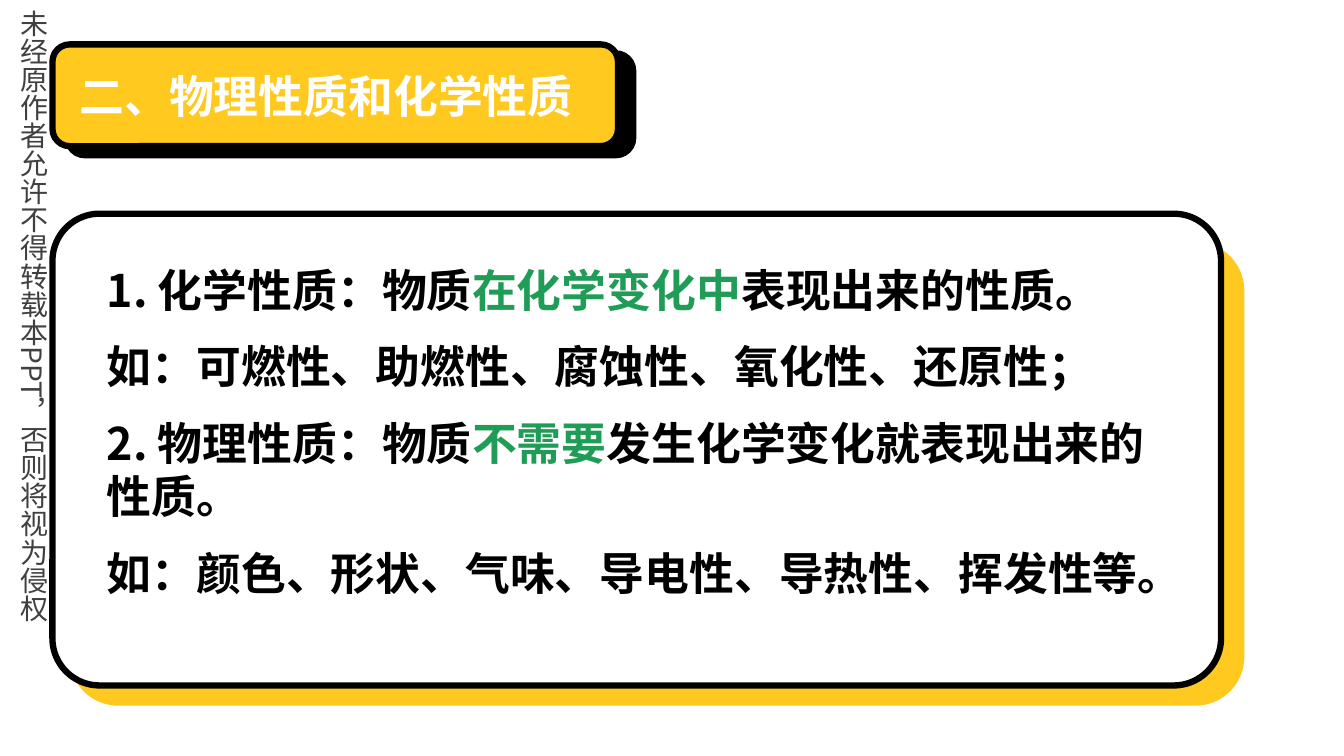
from pptx import Presentation
from pptx.dml.color import RGBColor
from pptx.enum import shapes, text
from pptx.oxml import ns
from pptx.util import Inches, Pt
from lxml import etree

FONT = "Noto Sans CJK SC"
BLACK = RGBColor(0, 0, 0)
WHITE = RGBColor(255, 255, 255)
YELLOW = RGBColor(0xFF, 0xC9, 0x1F)
GREEN = RGBColor(0x1F, 0x9C, 0x56)
GREY = RGBColor(0x40, 0x40, 0x40)

NOTICE = "未经原作者允许不得转载本PPT，否则将视为侵权"
TITLE = "二、物理性质和化学性质"
PROPERTIES = [
    [("1. 化学性质：物质", BLACK), ("在化学变化中", GREEN), ("表现出来的性质。", BLACK)],
    [("如：可燃性、助燃性、腐蚀性、氧化性、还原性；", BLACK)],
    [("2. 物理性质：物质", BLACK), ("不需要", GREEN), ("发生化学变化就表现出来的性质。", BLACK)],
    [("如：颜色、形状、气味、导电性、导热性、挥发性等。", BLACK)],
]


def add_run(p, content, size=32, color=BLACK, bold=True):
    r = p.add_run()
    r.text = content
    r.font.size = Pt(size)
    r.font.bold = bold
    r.font.color.rgb = color
    r.font.name = FONT
    ea = etree.SubElement(r._r.get_or_add_rPr(), ns.qn("a:ea"))
    ea.set("typeface", FONT)


def add_text(slide, box, paragraphs, size=32, bold=True, line=None, before=0, vertical=False):
    sp = slide.shapes.add_textbox(*map(Inches, box))
    tf = sp.text_frame
    tf.word_wrap = True
    tf.auto_size = text.MSO_AUTO_SIZE.NONE
    if vertical:
        tf._txBody.bodyPr.set("vert", "eaVert")
    for i, runs in enumerate(paragraphs):
        p = tf.paragraphs[0] if i == 0 else tf.add_paragraph()
        p.line_spacing = line
        if i:
            p.space_before = Pt(before)
        for content, color in runs:
            add_run(p, content, size, color, bold)


def add_panel(slide, box, fill, line, corner=0.17):
    sp = slide.shapes.add_shape(shapes.MSO_SHAPE.ROUNDED_RECTANGLE, *map(Inches, box))
    sp.adjustments[0] = corner
    sp.shadow.inherit = False
    sp.fill.solid()
    sp.fill.fore_color.rgb = fill
    sp.line.color.rgb = line
    sp.line.width = Pt(4.5)


def main():
    prs = Presentation()
    prs.slide_width = Inches(13.33)
    prs.slide_height = Inches(7.5)
    s = prs.slides.add_slide(prs.slide_layouts[6])

    add_text(s, (0, 0, 0.71, 7.36), [[(NOTICE, GREY)]], size=20, bold=False, line=1.5, vertical=True)
    add_panel(s, (0.67, 0.53, 5.61, 1.01), BLACK, BLACK)
    add_panel(s, (0.52, 0.44, 5.61, 1.01), YELLOW, BLACK)
    add_text(s, (0.69, 0.63, 5.19, 0.64), [[(TITLE, WHITE)]])
    add_panel(s, (0.72, 2.43, 11.59, 4.54), YELLOW, YELLOW, corner=0.1)
    add_panel(s, (0.52, 2.12, 11.59, 4.68), WHITE, BLACK, corner=0.1)
    add_text(s, (0.96, 2.56, 10.81, 5.22), PROPERTIES, before=16)

    prs.save("out.pptx")


if __name__ == "__main__":
    main()
